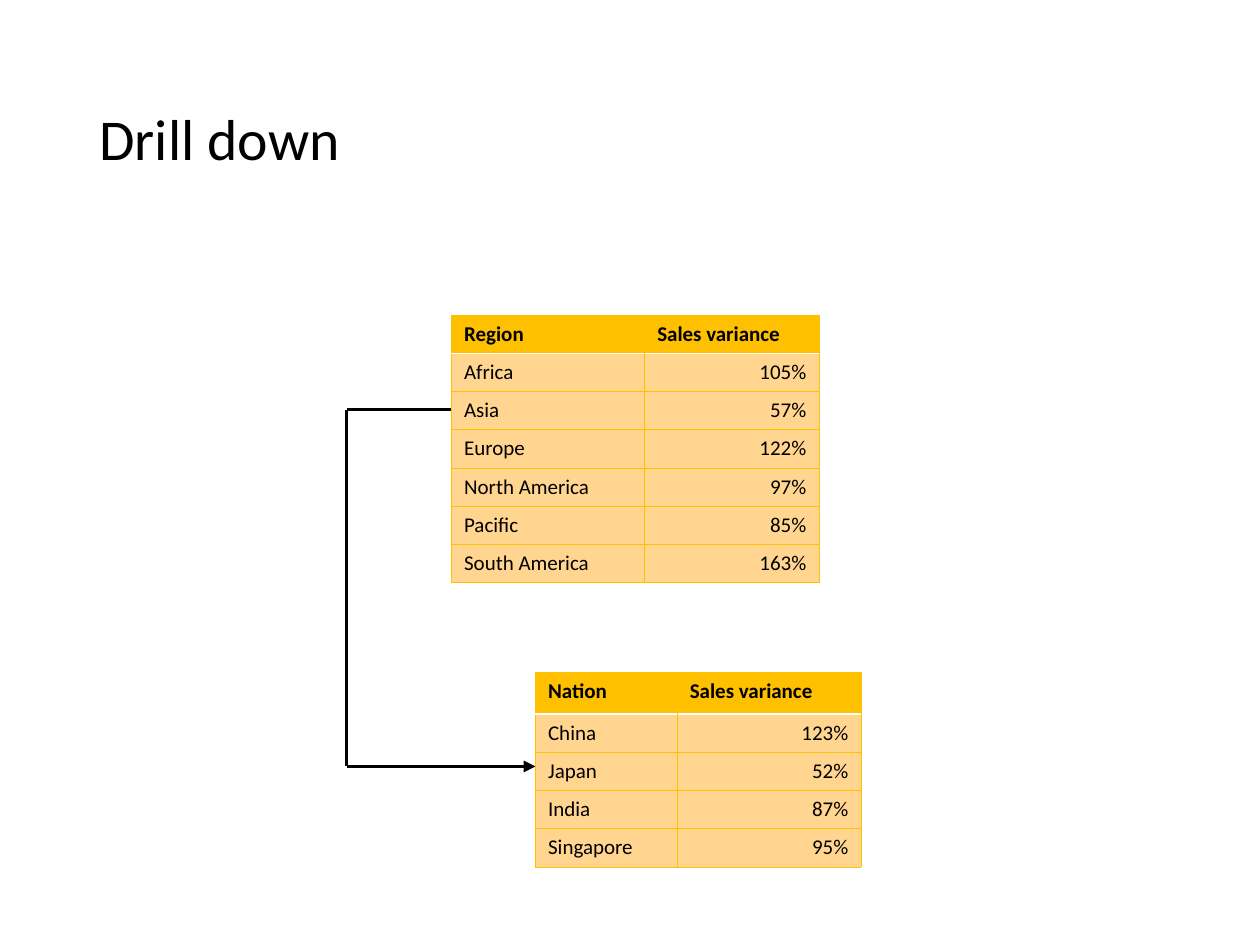
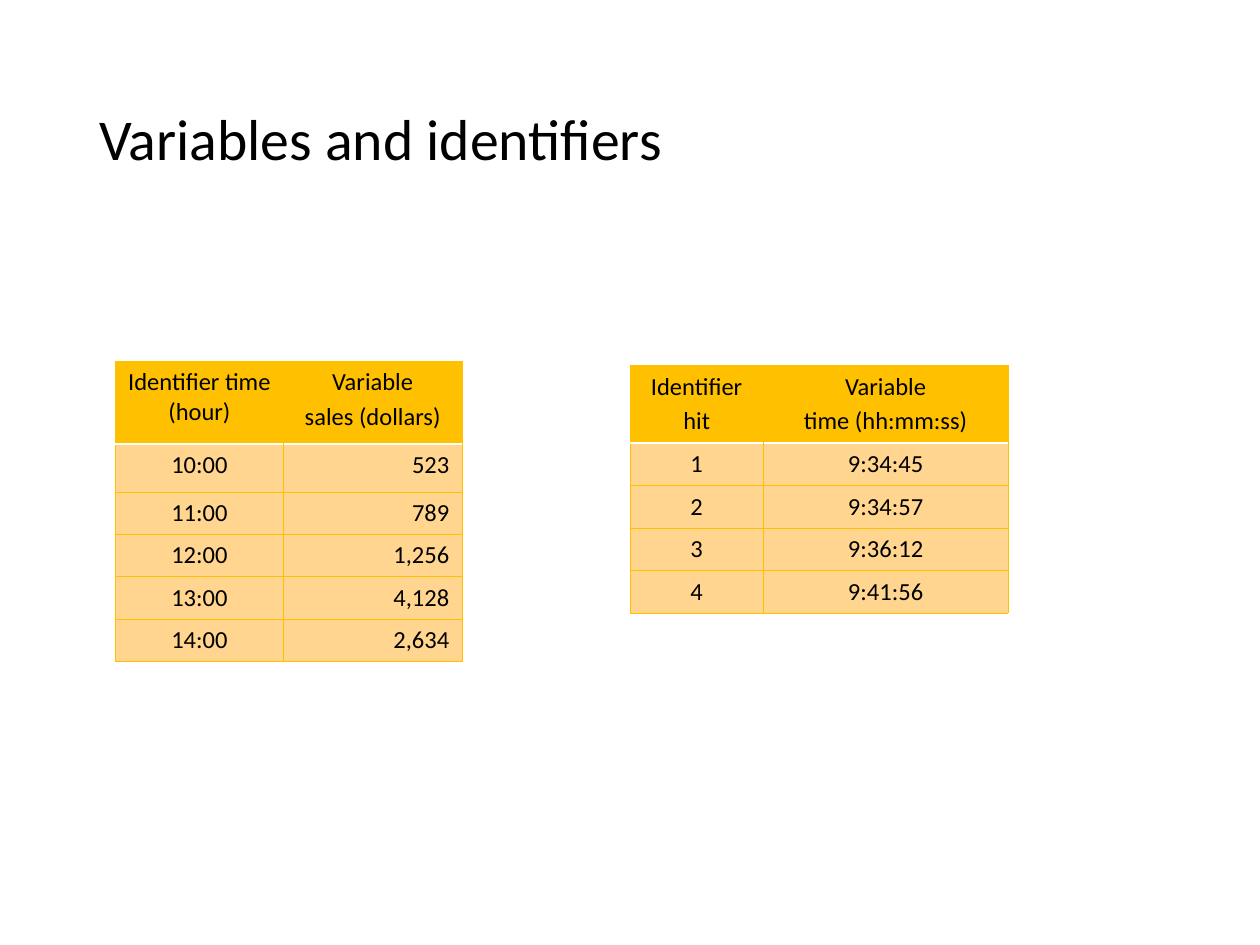
from lxml.etree import SubElement
from pptx import Presentation
from pptx.dml.color import RGBColor
from pptx.enum.shapes import MSO_CONNECTOR as CONN
from pptx.enum.text import MSO_ANCHOR as ANCHOR, MSO_AUTO_SIZE as AUTO, PP_ALIGN as AL
from pptx.oxml.ns import qn
from pptx.util import Inches, Pt

BLACK = RGBColor(0x00, 0x00, 0x00)
WHITE = RGBColor(0xFF, 0xFF, 0xFF)
GOLD = RGBColor(0xFF, 0xC0, 0x00)
PEACH = RGBColor(0xFF, 0xD5, 0x90)
FONT = "Calibri"
GRID = (120, 90)
THIN, RULE = (GOLD, 0.5), (WHITE, 1)


class Deck:
    """Holds the style and the current slide; lengths are in grid units."""

    def __init__(self):
        self.prs = Presentation()
        self.prs.slide_width, self.prs.slide_height = Inches(10), Inches(7.5)
        self.s = None

    def x(self, cols):
        return round(self.prs.slide_width * cols / GRID[0])

    def y(self, rows):
        return round(self.prs.slide_height * rows / GRID[1])

    def run(self, p, text, size, bold=False):
        r = p.add_run()
        r.text = text
        f = r.font
        f.name, f.size, f.bold = FONT, Pt(size), bold
        f.color.rgb = BLACK

    def slide(self, title):
        self.s = self.prs.slides.add_slide(self.prs.slide_layouts[5])
        sp = self.s.shapes.title
        sp.left, sp.top = self.x(8.25), self.y(4.8)
        sp.width, sp.height = self.x(103.5), self.y(17.4)
        tf = sp.text_frame
        tf.auto_size, tf.vertical_anchor, tf.word_wrap = AUTO.NONE, ANCHOR.MIDDLE, True
        p = tf.paragraphs[0]
        p.alignment, p.line_spacing = AL.LEFT, 0.9
        self.run(p, title, 33)

    def border(self, cell, side, style):
        pr = cell._tc.get_or_add_tcPr()
        ln = SubElement(pr, qn("a:ln" + side))
        if style is None:
            SubElement(ln, qn("a:noFill"))
            return
        color, width = style
        ln.set("w", str(Pt(width)))
        SubElement(SubElement(ln, qn("a:solidFill")), qn("a:srgbClr")).set("val", str(color))

    def cell(self, cell, text, size, align, bold, fill, borders):
        for side, style in zip("LRTB", borders):
            self.border(cell, side, style)
        cell.fill.solid()
        cell.fill.fore_color.rgb = fill
        tf = cell.text_frame
        for i, line in enumerate(text.split("\n")):
            p = tf.add_paragraph() if i else tf.paragraphs[0]
            p.alignment, p.space_before = align, Pt(size * 0.2)
            self.run(p, line, size, bold)

    def table(self, left, top, cols, heights, data, size, head_align, aligns, bold=False):
        frame = self.s.shapes.add_table(len(data), len(cols), self.x(left), self.y(top),
                                        self.x(sum(cols)), self.y(sum(heights)))
        t = frame.table
        for col, width in zip(t.columns, cols):
            col.width = self.x(width)
        for row, height in zip(t.rows, heights):
            row.height = self.y(height)
        last = len(cols) - 1
        for i, values in enumerate(data):
            for j, text in enumerate(values):
                if i == 0:
                    borders = (None if j else THIN, THIN if j == last else None, THIN, RULE)
                    self.cell(t.cell(i, j), text, size, head_align, bold, GOLD, borders)
                else:
                    borders = (THIN, THIN, RULE if i == 1 else THIN, THIN)
                    self.cell(t.cell(i, j), text, size, aligns[j], False, PEACH, borders)

    def line(self, start, end, arrow=False):
        c = self.s.shapes.add_connector(CONN.STRAIGHT, self.x(start[0]), self.y(start[1]),
                                        self.x(end[0]), self.y(end[1]))
        c.line.color.rgb, c.line.width = BLACK, Pt(2.25)
        if arrow:
            SubElement(c.line._get_or_add_ln(), qn("a:tailEnd")).set("type", "triangle")
        SubElement(c._element.spPr, qn("a:effectLst"))

    def route(self, *points):
        legs = list(zip(points, points[1:]))
        for i, (start, end) in enumerate(legs, 1):
            self.line(start, end, arrow=i == len(legs))


def drill_down(deck):
    regions = [("Region", "Sales variance"), ("Africa", "105%"), ("Asia", "57%"),
               ("Europe", "122%"), ("North America", "97%"), ("Pacific", "85%"),
               ("South America", "163%")]
    nations = [("Nation", "Sales variance"), ("China", "123%"), ("Japan", "52%"),
               ("India", "87%"), ("Singapore", "95%")]
    deck.slide("Drill down")
    deck.route((43, 39), (33, 39), (33, 73), (51, 73))
    aligns = (AL.LEFT, AL.RIGHT)
    deck.table(43, 30, (18.4, 16.6), [3.63] * 7, regions, 12, AL.LEFT, aligns, bold=True)
    deck.table(51, 64, (13.5, 17.5), [4] + [3.63] * 4, nations, 12, AL.LEFT, aligns, bold=True)


def variables(deck):
    sales = [("Identifier time (hour)", "Variable\nsales (dollars)"), ("10:00", "523"),
             ("11:00", "789"), ("12:00", "1,256"), ("13:00", "4,128"), ("14:00", "2,634")]
    hits = [("Identifier\nhit", "Variable\ntime (hh:mm:ss)"), ("1", "9:34:45"),
            ("2", "9:34:57"), ("3", "9:36:12"), ("4", "9:41:56")]
    deck.slide("Variables and identifiers")
    deck.table(11, 34.4, (16, 17), [7.9, 4.55] + [4.04] * 4, sales, 14,
               AL.CENTER, (AL.CENTER, AL.RIGHT))
    deck.table(60, 34.8, (12.7, 23.3), [7.4] + [4.04] * 4, hits, 14,
               AL.CENTER, (AL.CENTER, AL.CENTER))


def main():
    deck = Deck()
    drill_down(deck)
    variables(deck)
    deck.prs.save("out.pptx")


if __name__ == "__main__":
    main()
